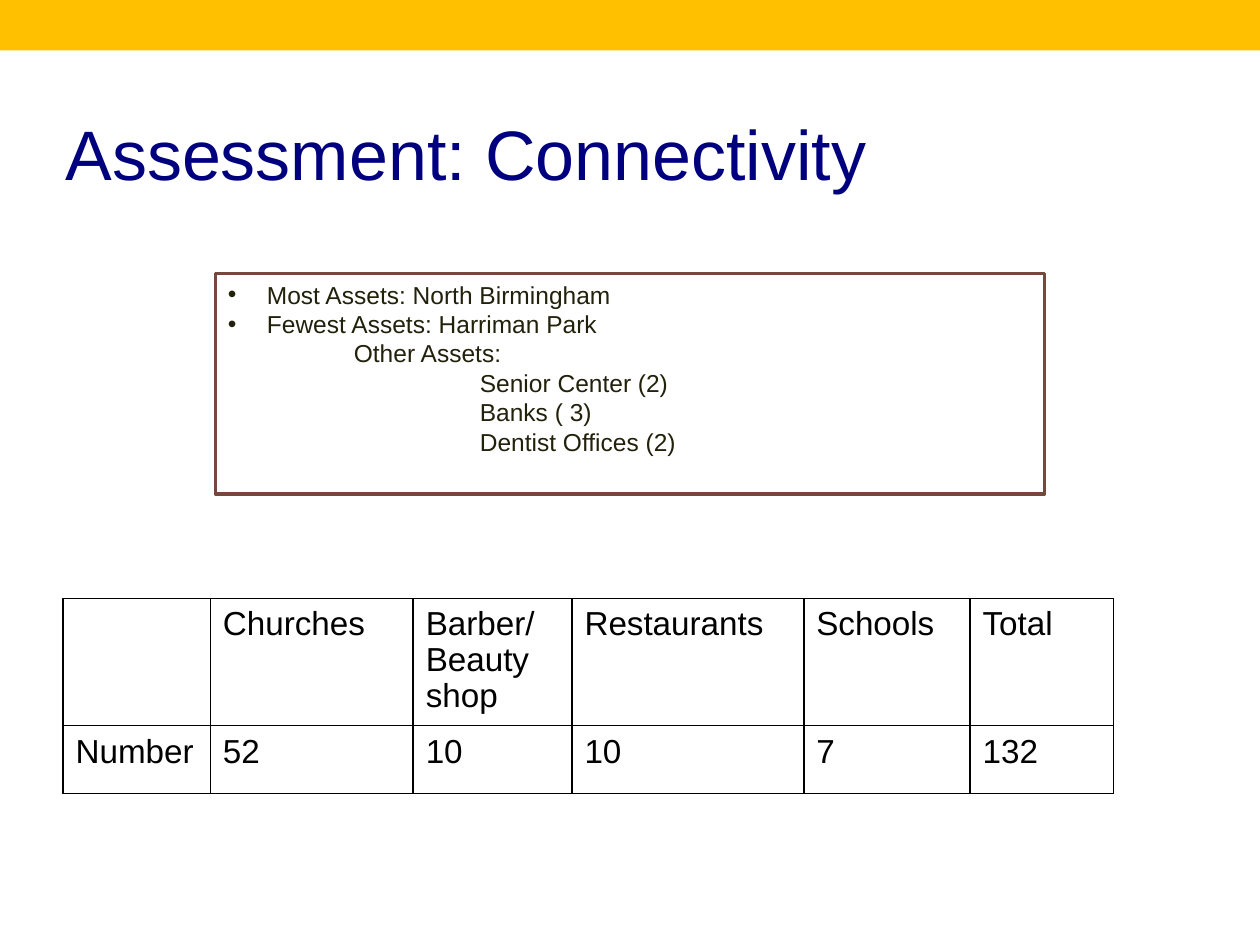
from lxml import etree
from pptx import Presentation
from pptx import util as u
from pptx.dml.color import RGBColor
from pptx.enum import shapes, text
from pptx.oxml import ns

WIDTH, HEIGHT = 10, 7.5
FONT = "Arial"
AMBER = RGBColor(0xFF, 0xC0, 0x00)
NAVY = RGBColor(0x00, 0x00, 0x7F)
BROWN = RGBColor(0x79, 0x46, 0x3D)
OLIVE = RGBColor(0x22, 0x21, 0x0B)
BLACK = RGBColor(0x00, 0x00, 0x00)
WHITE = RGBColor(0xFF, 0xFF, 0xFF)

BULLET_INDENT = 0.31
# Wording and level: 0 is bulleted, each further level steps in by one inch
ASSETS = [
    ("Most Assets: North Birmingham", 0),
    ("Fewest Assets: Harriman Park", 0),
    ("Other Assets:", 1),
    ("Senior Center (2)", 2),
    ("Banks ( 3)", 2),
    ("Dentist Offices (2)", 2),
]
COLUMN_WIDTHS = [1.17, 1.61, 1.26, 1.84, 1.32, 1.14]
ROW_HEIGHTS = [1.01, 0.54]
COUNTS = [
    ["", "Churches", "Barber/ Beauty shop", "Restaurants", "Schools", "Total"],
    ["Number", "52", "10", "10", "7", "132"],
]


def inches(*lengths):
    return [u.Inches(length) for length in lengths]


def add_run(paragraph, wording, size, color):
    run = paragraph.add_run()
    run.text = wording
    run.font.name = FONT
    run.font.size = u.Pt(size)
    run.font.color.rgb = color


def set_margins(holder, side, end):
    holder.margin_left = holder.margin_right = u.Inches(side)
    holder.margin_top = holder.margin_bottom = u.Inches(end)


def add_box(slide, place, fill, line=None):
    box = slide.shapes.add_shape(shapes.MSO_SHAPE.RECTANGLE, *inches(*place))
    box.shadow.inherit = False
    box.fill.solid()
    box.fill.fore_color.rgb = fill
    if line is None:
        box.line.fill.background()
    else:
        box.line.color.rgb = line
        box.line.width = u.Pt(2)
    return box


def write_title(slide, wording):
    title = slide.shapes.title
    title.left, title.top, title.width, title.height = inches(0.42, 0.39, 9, 1.25)
    frame = title.text_frame
    frame.word_wrap = True
    frame.auto_size = text.MSO_AUTO_SIZE.NONE
    frame.vertical_anchor = text.MSO_ANCHOR.BOTTOM
    set_margins(frame, 0.1, 0.1)
    paragraph = frame.paragraphs[0]
    paragraph.alignment = text.PP_ALIGN.LEFT
    add_run(paragraph, wording, 40, NAVY)


def indent(paragraph, level):
    properties = paragraph._p.get_or_add_pPr()
    if level:
        properties.set("marL", str(u.Inches(level)))
        return
    properties.set("marL", str(u.Inches(BULLET_INDENT)))
    properties.set("indent", str(-u.Inches(BULLET_INDENT)))
    etree.SubElement(properties, ns.qn("a:buFont"), typeface=FONT)
    etree.SubElement(properties, ns.qn("a:buChar"), char="•")


def write_list(box, items):
    frame = box.text_frame
    frame.word_wrap = True
    frame.vertical_anchor = text.MSO_ANCHOR.TOP
    set_margins(frame, 0.1, 0.05)
    for index, (wording, level) in enumerate(items):
        paragraph = frame.add_paragraph() if index else frame.paragraphs[0]
        paragraph.alignment = text.PP_ALIGN.LEFT
        indent(paragraph, level)
        add_run(paragraph, wording, 14, OLIVE)


def draw_borders(cell):
    properties = cell._tc.get_or_add_tcPr()
    for position, side in enumerate(("lnL", "lnR", "lnT", "lnB")):
        line = etree.Element(ns.qn(f"a:{side}"), w=str(u.Pt(1)))
        fill = etree.SubElement(line, ns.qn("a:solidFill"))
        etree.SubElement(fill, ns.qn("a:srgbClr"), val=str(BLACK))
        properties.insert(position, line)


def add_count_table(slide, left, top):
    size = inches(left, top, sum(COLUMN_WIDTHS), sum(ROW_HEIGHTS))
    table = slide.shapes.add_table(len(COUNTS), len(COLUMN_WIDTHS), *size).table
    table.first_row = table.horz_banding = False
    for column, width in zip(table.columns, COLUMN_WIDTHS):
        column.width = u.Inches(width)
    for row, height, wordings in zip(table.rows, ROW_HEIGHTS, COUNTS):
        row.height = u.Inches(height)
        for cell, wording in zip(row.cells, wordings):
            cell.fill.solid()
            cell.fill.fore_color.rgb = WHITE
            set_margins(cell, 0.1, 0.07)
            draw_borders(cell)
            if wording:
                paragraph = cell.text_frame.paragraphs[0]
                paragraph.line_spacing = 0.97
                add_run(paragraph, wording, 19, BLACK)


def main():
    presentation = Presentation()
    presentation.slide_width, presentation.slide_height = inches(WIDTH, HEIGHT)
    slide = presentation.slides.add_slide(presentation.slide_layouts[5])
    add_box(slide, (0, 0, WIDTH, 0.4), AMBER)
    write_title(slide, "Assessment: Connectivity")
    add_count_table(slide, 0.5, 4.75)
    assets_box = add_box(slide, (1.71, 2.17, 6.58, 1.75), WHITE, BROWN)
    write_list(assets_box, ASSETS)
    presentation.save("out.pptx")


if __name__ == "__main__":
    main()
